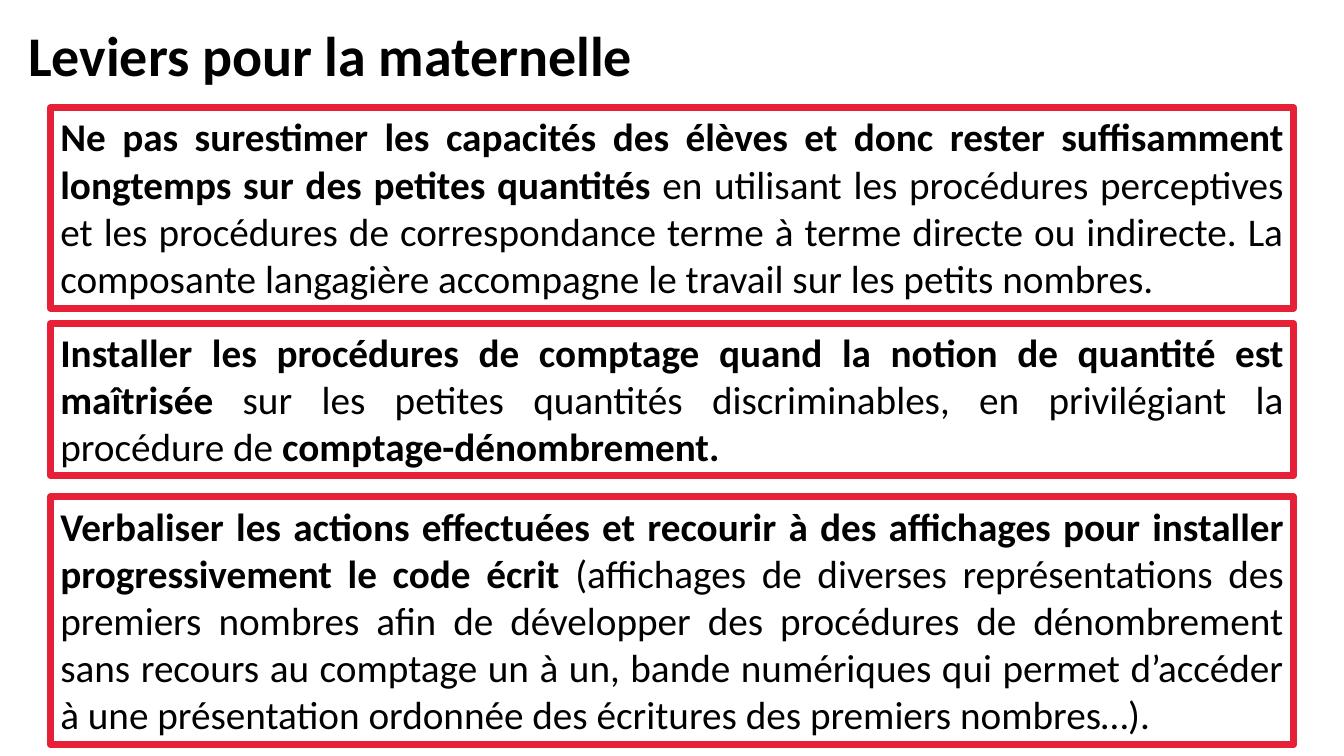
"""Build the slide listing teaching levers for nursery school."""
import dataclasses

import pptx
import pptx.dml.color
import pptx.enum.shapes
import pptx.enum.text
import pptx.util

ANCHOR = pptx.enum.text.MSO_ANCHOR
ALIGN = pptx.enum.text.PP_ALIGN
BLACK, RED = "000000", "E52037"
W, H = pptx.util.Inches(13.33), pptx.util.Inches(7.5)
LEFT, WIDTH = 3.75, 92.5


@dataclasses.dataclass(frozen=True)
class Lever:
    """A framed paragraph placed in percent of the slide height; runs alternate bold and plain."""
    top: float
    height: float
    runs: tuple[str, ...]


LEVERS = (
    Lever(14.27, 26.53, (
        "Ne pas surestimer les capacités des élèves et donc rester suffisamment "
        "longtemps sur des petites quantités ",
        "en utilisant les procédures perceptives et les procédures de correspondance "
        "terme à terme directe ou indirecte. La composante langagière accompagne le "
        "travail sur les petits nombres.")),
    Lever(42.8, 20.13, (
        "Installer les procédures de comptage quand la notion de quantité est maîtrisée ",
        "sur les petites quantités discriminables, en privilégiant la procédure de ",
        "comptage-dénombrement.")),
    Lever(65.73, 32.8, (
        "Verbaliser les actions effectuées et recourir à des affichages pour installer "
        "progressivement le code écrit ",
        "(affichages de diverses représentations des premiers nombres afin de développer "
        "des procédures de dénombrement sans recours au comptage un à un, bande numériques "
        "qui permet d’accéder à une présentation ordonnée des écritures des premiers "
        "nombres…).")),
)


def rgb(color: str) -> pptx.dml.color.RGBColor:
    """Turn a hex string into a colour."""
    return pptx.dml.color.RGBColor.from_string(color)


def set_all(obj: object, values: dict[str, object]) -> None:
    """Set every attribute named in the dict."""
    for name, value in values.items():
        setattr(obj, name, value)


def box(left: float, top: float, width: float, height: float) -> dict[str, int]:
    """Convert percentages of the slide into a position and size."""
    return {"left": round(W * left / 100), "top": round(H * top / 100),
            "width": round(W * width / 100), "height": round(H * height / 100)}


def write(sp: object, runs: tuple[str, ...], size: int, align: object, anchor: object) -> None:
    """Write alternating bold and plain runs in one paragraph."""
    tf = sp.text_frame
    set_all(tf, {"word_wrap": True, "vertical_anchor": anchor,
                 "auto_size": pptx.enum.text.MSO_AUTO_SIZE.NONE})
    p = tf.paragraphs[0]
    p.alignment = align
    for i, text in enumerate(runs):
        r = p.add_run()
        r.text = text
        set_all(r.font, {"name": "Calibri", "size": pptx.util.Pt(size), "bold": i % 2 == 0})
        r.font.color.rgb = rgb(BLACK)


def add_lever(s: object, lever: Lever) -> None:
    """Draw one red frame with its text."""
    sp = s.shapes.add_shape(pptx.enum.shapes.MSO_SHAPE.RECTANGLE,
                            **box(LEFT, lever.top, WIDTH, lever.height))
    sp.shadow.inherit = False
    sp.fill.background()
    sp.line.color.rgb = rgb(RED)
    sp.line.width = pptx.util.Pt(5)
    write(sp, lever.runs, 28, ALIGN.JUSTIFY, ANCHOR.TOP)


def main() -> None:
    """Create and save the presentation."""
    prs = pptx.Presentation()
    set_all(prs, {"slide_width": W, "slide_height": H})
    s = prs.slides.add_slide(prs.slide_layouts.get_by_name("Title Only"))
    title = s.shapes.title
    set_all(title, box(1.35, 2, 97.22, 10.27))
    write(title, ("Leviers pour la maternelle",), 40, ALIGN.LEFT, ANCHOR.TOP)
    for lever in LEVERS:
        add_lever(s, lever)
    prs.save("out.pptx")


if __name__ == "__main__":
    main()
